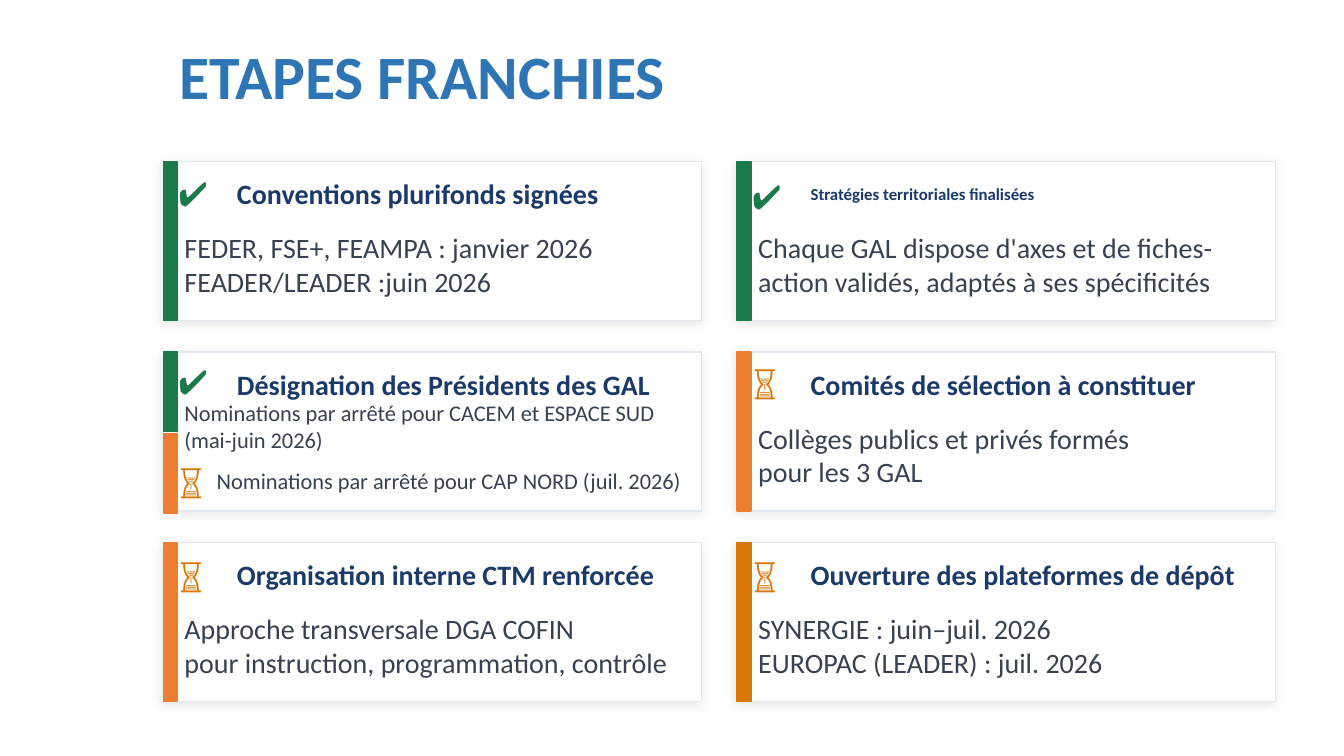
from dataclasses import dataclass
from lxml.etree import SubElement
from pptx import Presentation
from pptx.dml.color import RGBColor
from pptx.enum.shapes import MSO_SHAPE
from pptx.enum.text import MSO_ANCHOR
from pptx.oxml.ns import qn
from pptx.util import Inches, Pt


@dataclass(frozen=True)
class Theme:
    font: str = "Calibri"
    blue: str = "2E75B6"
    navy: str = "1A3A6B"
    gray: str = "374151"
    green: str = "1A7A4A"
    orange: str = "ED7D31"
    amber: str = "D97706"
    white: str = "FFFFFF"
    border: str = "E2E8F0"
    shadow: str = "000000"
    title_size: int = 44
    icon_size: int = 24
    body_size: int = 20
    detail_size: int = 16
    small_size: int = 12


theme = Theme()
deck = Presentation()
deck.slide_width = Inches(13.33)
deck.slide_height = Inches(7.5)
page = deck.slides.add_slide(deck.slide_layouts[6])


def add_rectangle(left, top, width, height, fill, line):
    box = page.shapes.add_shape(
        MSO_SHAPE.RECTANGLE, Inches(left), Inches(top), Inches(width), Inches(height)
    )
    box.shadow.inherit = False
    box.fill.solid()
    box.fill.fore_color.rgb = RGBColor.from_string(fill)
    box.line.color.rgb = RGBColor.from_string(line)
    box.line.width = Pt(1)
    return box


def add_text(left, top, width, height, lines, size, color, bold=False):
    box = page.shapes.add_textbox(Inches(left), Inches(top), Inches(width), Inches(height))
    frame = box.text_frame
    frame.word_wrap = True
    frame.vertical_anchor = MSO_ANCHOR.MIDDLE
    frame.margin_left = frame.margin_right = frame.margin_top = frame.margin_bottom = 0
    for index, line in enumerate(lines):
        para = frame.add_paragraph() if index else frame.paragraphs[0]
        span = para.add_run()
        span.text = line
        span.font.name = theme.font
        span.font.size = Pt(size)
        span.font.bold = bold
        span.font.color.rgb = RGBColor.from_string(color)


add_text(1.78, 0.34, 10.58, 0.8, ["ETAPES FRANCHIES"], theme.title_size, theme.blue, True)

done = ("✔", theme.green)
pending = ("⏳", theme.amber)
card_width, card_height, bar_width = 5.34, 1.58, 0.14
half_height = card_height / 2

steps = [
    ("Conventions plurifonds signées", theme.body_size, done, 0.1, theme.green,
     ["FEDER, FSE+, FEAMPA : janvier 2026", "FEADER/LEADER :juin 2026"]),
    ("Stratégies territoriales finalisées", theme.small_size, done, 0.13, theme.green,
     ["Chaque GAL dispose d'axes et de fiches-action validés, adaptés à ses spécificités"]),
    ("Désignation des Présidents des GAL", theme.body_size, done, 0.07, theme.green, []),
    ("Comités de sélection à constituer", theme.body_size, pending, 0.07, theme.orange,
     ["Collèges publics et privés formés", "pour les 3 GAL"]),
    ("Organisation interne CTM renforcée", theme.body_size, pending, 0.1, theme.orange,
     ["Approche transversale DGA COFIN", "pour instruction, programmation, contrôle"]),
    ("Ouverture des plateformes de dépôt", theme.body_size, pending, 0.1, theme.amber,
     ["SYNERGIE : juin–juil. 2026", "EUROPAC (LEADER) : juil. 2026"]),
]

for index, (heading, heading_size, (icon, icon_color), icon_drop, bar_color, body) in enumerate(steps):
    row, column = divmod(index, 2)
    left = 1.62 + 5.69 * column
    top = 1.6 + 1.89 * row

    card = add_rectangle(left, top, card_width, card_height, theme.white, theme.border)
    effects = card._element.spPr.find(qn("a:effectLst"))
    shadow = SubElement(
        effects, qn("a:outerShdw"), blurRad=str(Pt(8)), dist=str(Pt(2)),
        dir=str(135 * 60000), algn="bl", rotWithShape="0",
    )
    shadow_color = SubElement(shadow, qn("a:srgbClr"), val=theme.shadow)
    SubElement(shadow_color, qn("a:alpha"), val="10000")

    bar_height = card_height if body else half_height
    add_rectangle(left, top, bar_width, bar_height, bar_color, bar_color)
    add_text(left + 0.15, top + icon_drop, 0.45, 0.44, [icon], theme.icon_size, icon_color, True)
    add_text(left + 0.73, top + 0.1, 4.41, 0.44, [heading], heading_size, theme.navy, True)
    if body:
        add_text(left + 0.21, top + 0.61, 4.93, 0.82, body, theme.body_size, theme.gray)
    else:
        add_text(left + 0.21, top + 0.52, 5.13, 0.44,
                 ["Nominations par arrêté pour CACEM et ESPACE SUD (mai-juin 2026)"],
                 theme.detail_size, theme.gray)
        add_rectangle(left, top + 0.81, bar_width, half_height, theme.orange, theme.orange)
        add_text(left + 0.53, top + 1.06, 4.73, 0.44,
                 ["Nominations par arrêté pour CAP NORD (juil. 2026)"],
                 theme.detail_size, theme.gray)
        pending_icon, pending_color = pending
        add_text(left + 0.15, top + 1.05, 0.45, 0.44, [pending_icon],
                 theme.icon_size, pending_color, True)

deck.save("out.pptx")
